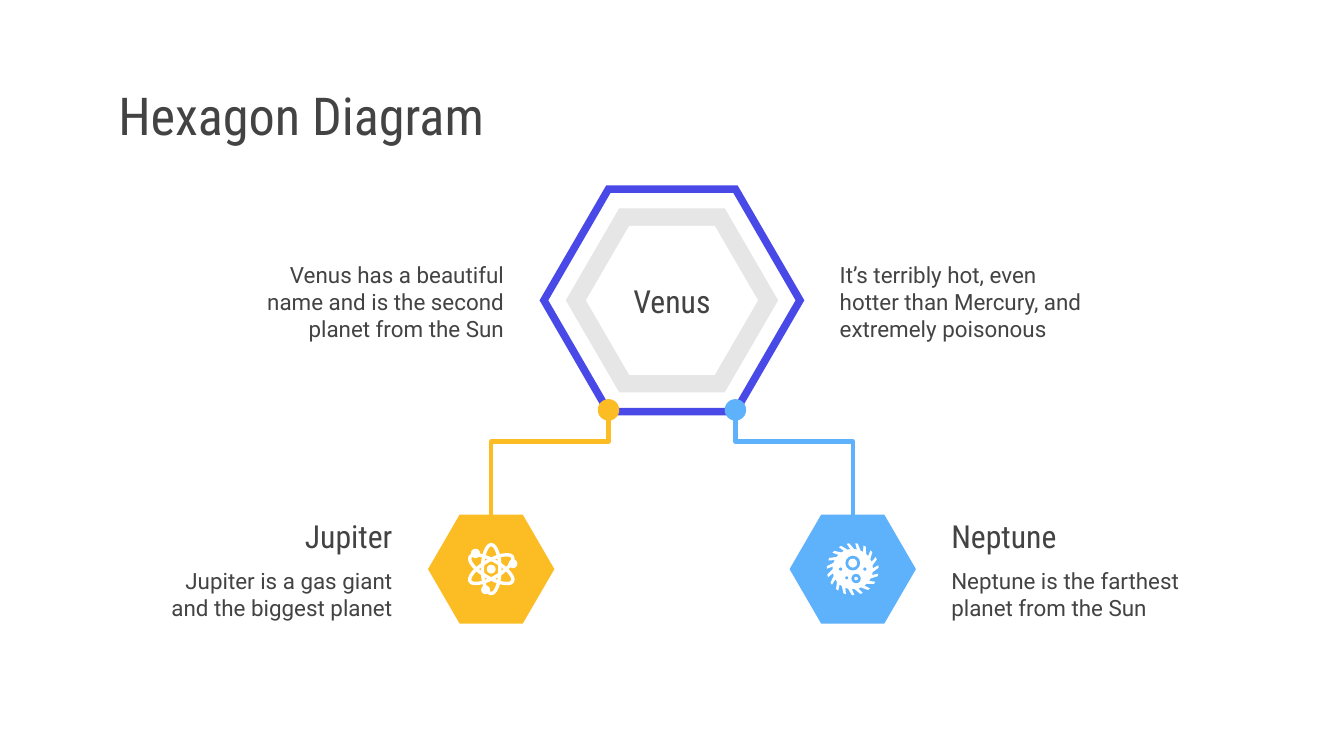
from dataclasses import dataclass
from math import cos, pi, sin

from pptx import Presentation
from pptx.dml.color import RGBColor
from pptx.enum.shapes import MSO_SHAPE as Preset
from pptx.enum.text import MSO_ANCHOR as Anchor, MSO_AUTO_SIZE as AutoSize, PP_ALIGN as Align
from pptx.shapes.autoshape import Shape
from pptx.slide import Slide
from pptx.util import Inches, Pt

Point = tuple[float, float]

# The grid has 100 columns across the slide and square cells.
CELL = Inches(0.1)
COLUMNS, ROWS = 100, 56.25
MIDDLE = COLUMNS / 2
LEFT, RIGHT = -1, 1
HEXAGON_INDENT = 0.29  # horizontal run of a slanted side, as a share of the height


@dataclass(frozen=True)
class Theme:
    text: str = "434343"
    white: str = "FFFFFF"
    ring: str = "4949E7"
    band: str = "E6E6E6"
    jupiter: str = "FCBD24"
    neptune: str = "5EB2FC"
    heading_font: str = "Roboto Condensed"
    body_font: str = "Roboto"
    title_size: float = 28
    heading_size: float = 17
    body_size: float = 12
    link_width: float = 2.25
    orbit_width: float = 1.8


THEME = Theme()


@dataclass(frozen=True)
class Branch:
    side: int
    name: str
    text: str
    color: str


@dataclass(frozen=True)
class Disc:
    column: float
    row: float
    radius: float
    color: str = THEME.white


VENUS_ROW = 22.35
PLANET_ROW = 42.35
PLANET_OFFSET = 13.45
CORNER_OFFSET, CORNER_ROW = 4.72, 30.5

VENUS_FACTS = {
    RIGHT: "It’s terribly hot, even hotter than Mercury, and extremely poisonous",
    LEFT: "Venus has a beautiful name and is the second planet from the Sun",
}
BRANCHES = [
    Branch(RIGHT, "Neptune", "Neptune is the farthest planet from the Sun", THEME.neptune),
    Branch(LEFT, "Jupiter", "Jupiter is a gas giant\vand the biggest planet", THEME.jupiter),
]
# Places are relative to the middle of the icon.
CRATERS = [
    Disc(0, -0.45, 0.55, THEME.neptune), Disc(0, -0.45, 0.33),
    Disc(0.25, 0.7, 0.35, THEME.neptune), Disc(0.25, 0.7, 0.13),
    Disc(-0.9, 0, 0.12, THEME.neptune), Disc(0.9, 0, 0.12, THEME.neptune),
    Disc(-0.45, 0.65, 0.11, THEME.neptune),
]
PARTICLES = [Disc(0, 0, 0.33), Disc(-1.17, -1.17, 0.35), Disc(1.62, -0.4, 0.33), Disc(-0.42, 1.53, 0.33)]


def cells(count: float) -> int:
    return round(count * CELL)


def rgb(color: str) -> RGBColor:
    return RGBColor.from_string(color)


def paint(shape: Shape, color: str) -> None:
    shape.shadow.inherit = False
    shape.fill.solid()
    shape.fill.fore_color.rgb = rgb(color)
    shape.line.fill.background()


def outline(shape: Shape, color: str, width: float) -> None:
    shape.shadow.inherit = False
    shape.fill.background()
    shape.line.color.rgb = rgb(color)
    shape.line.width = Pt(width)


def write(shape: Shape, text: str, size: float, font: str, align: Align, wrap: bool = True) -> None:
    frame = shape.text_frame
    frame.text = text
    frame.word_wrap = wrap
    frame.auto_size = AutoSize.NONE
    frame.vertical_anchor = Anchor.MIDDLE
    frame.margin_left = frame.margin_right = cells(1)
    frame.margin_top = frame.margin_bottom = cells(1)
    for para in frame.paragraphs:
        para.alignment = align
        for span in para.runs:
            span.font.size, span.font.name = Pt(size), font
            span.font.color.rgb = rgb(THEME.text)


def add_centred(page: Slide, preset: Preset, column: float, row: float, width: float, height: float) -> Shape:
    return page.shapes.add_shape(preset, cells(column - width / 2), cells(row - height / 2),
                                 cells(width), cells(height))


def add_hexagon(page: Slide, column: float, row: float, width: float, height: float, color: str) -> Shape:
    hexagon = add_centred(page, Preset.HEXAGON, column, row, width, height)
    hexagon.adjustments[0] = HEXAGON_INDENT
    paint(hexagon, color)
    return hexagon


def add_disc(page: Slide, column: float, row: float, disc: Disc) -> None:
    paint(add_centred(page, Preset.OVAL, column + disc.column, row + disc.row,
                      2 * disc.radius, 2 * disc.radius), disc.color)


def add_outline(page: Slide, contours: list[list[Point]], close: bool = True) -> Shape:
    scaled = [[(cells(x), cells(y)) for x, y in contour] for contour in contours]
    builder = page.shapes.build_freeform(*scaled[0][0])
    for index, contour in enumerate(scaled):
        if index:
            builder.move_to(*contour[0])
        builder.add_line_segments(contour[1:], close=close)
    return builder.convert_to_shape()


def hexagon_points(width: float, height: float) -> list[Point]:
    x, y = width / 2, height / 2
    inner = x - HEXAGON_INDENT * height
    corners = [(-inner, -y), (-x, 0), (-inner, y), (inner, y), (x, 0), (inner, -y)]
    return [(MIDDLE + across, VENUS_ROW + down) for across, down in corners]


def add_side_text(page: Slide, side: int, offset: float, top: float, height: float,
                  text: str, size: float, font: str) -> None:
    """Place a text at the same distance from the middle on either side."""
    width = 20.6
    left = MIDDLE + offset if side == RIGHT else MIDDLE - offset - width
    box = page.shapes.add_textbox(cells(left), cells(top), cells(width), cells(height))
    write(box, text, size, font, Align.LEFT if side == RIGHT else Align.RIGHT)


def add_venus(page: Slide) -> None:
    paint(add_outline(page, [hexagon_points(19.7, 17.1), hexagon_points(18.4, 16)[::-1]]), THEME.ring)
    add_hexagon(page, MIDDLE, VENUS_ROW, 15.8, 13.7, THEME.band)
    core = add_hexagon(page, MIDDLE, VENUS_ROW, 12.8, 11.1, THEME.white)
    write(core, "Venus", THEME.heading_size, THEME.heading_font, Align.CENTER, wrap=False)
    for side, fact in VENUS_FACTS.items():
        add_side_text(page, side, 11.5, 17.7, 9.5, fact, THEME.body_size, THEME.body_font)


def add_branch(page: Slide, branch: Branch) -> None:
    corner = MIDDLE + branch.side * CORNER_OFFSET
    planet = MIDDLE + branch.side * PLANET_OFFSET
    bend = 32.85
    link = add_outline(page, [[(corner, CORNER_ROW), (corner, bend), (planet, bend), (planet, 38.4)]], close=False)
    outline(link, branch.color, THEME.link_width)
    add_disc(page, corner, CORNER_ROW, Disc(0, 0, 0.8, branch.color))
    add_hexagon(page, planet, PLANET_ROW, 9.4, 8.1, branch.color)
    add_side_text(page, branch.side, 19.8, 37.5, 4.7, branch.name, THEME.heading_size, THEME.heading_font)
    add_side_text(page, branch.side, 19.8, 41.3, 5.8, branch.text, THEME.body_size, THEME.body_font)


def add_toothed_planet(page: Slide, column: float, row: float) -> None:
    teeth = 19
    tooth = [(1.5, -0.04), (1.93, -0.15), (1.93, -0.05), (1.5, 0.15)]  # radius, angle
    points = [(column + radius * cos(turn + angle), row + radius * sin(turn + angle))
              for turn in (2 * pi * index / teeth for index in range(teeth))
              for radius, angle in tooth]
    paint(add_outline(page, [points]), THEME.white)
    for crater in CRATERS:
        add_disc(page, column, row, crater)


def add_atom(page: Slide, column: float, row: float) -> None:
    for angle in (0, 60, 120):
        orbit = add_centred(page, Preset.OVAL, column, row, 1.3, 3.65)
        orbit.rotation = angle
        outline(orbit, THEME.white, THEME.orbit_width)
    for particle in PARTICLES:
        add_disc(page, column, row, particle)


def main() -> None:
    deck = Presentation()
    deck.slide_width, deck.slide_height = cells(COLUMNS), cells(ROWS)
    page = deck.slides.add_slide(deck.slide_layouts[5])
    title = page.shapes.title
    title.left, title.top, title.width, title.height = map(cells, (7.8, 5.9, 84.5, 5.3))
    write(title, "Hexagon Diagram", THEME.title_size, THEME.heading_font, Align.LEFT)
    add_venus(page)
    for branch in BRANCHES:
        add_branch(page, branch)
    add_toothed_planet(page, MIDDLE + PLANET_OFFSET, PLANET_ROW)
    add_atom(page, MIDDLE - PLANET_OFFSET, PLANET_ROW)
    deck.save("out.pptx")


if __name__ == "__main__":
    main()
